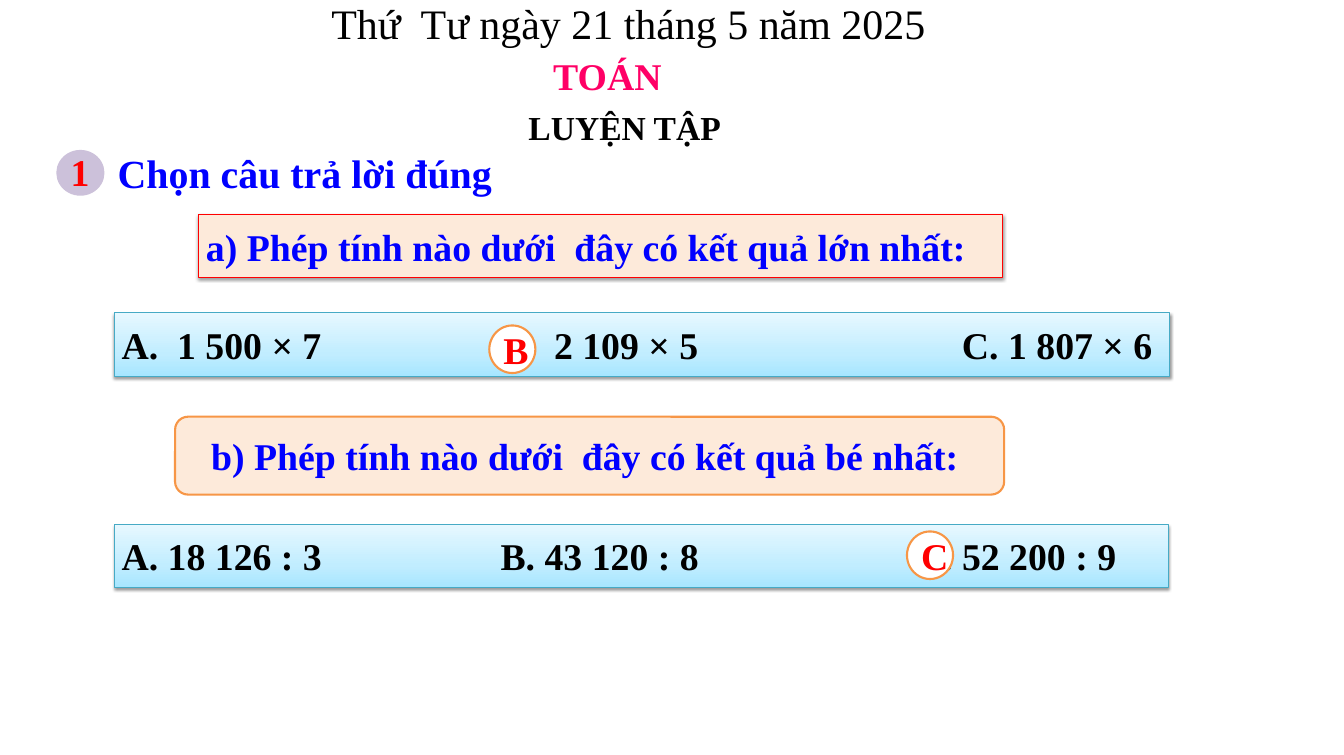
"""Build the maths practice slide with two multiple-choice questions."""
from copy import deepcopy

from lxml.etree import SubElement
from pptx import Presentation
from pptx.dml.color import RGBColor
from pptx.enum.shapes import MSO_SHAPE as SHAPE
from pptx.enum.text import MSO_ANCHOR as ANCHOR, MSO_AUTO_SIZE as FIT, PP_ALIGN as ALIGN
from pptx.oxml.ns import qn
from pptx.util import Cm, Pt

COLORS = {
    "black": "000000", "red": "FF0000", "blue": "0000FF", "pink": "FF0066",
    "lilac": "CCC1DA", "peach": "FDEADA", "orange": "F79646", "white": "FFFFFF",
    "teal": "46AAC5",
}
SKY = [(0, "A7E6FF"), (0.35, "C1EDFF"), (1, "E7F8FF")]
FONT = "Times New Roman"

TITLE = ("LUYỆN TẬP ", (12.45, 3.48, 17.35, 1.63), {"size": 32, "align": ALIGN.CENTER})
BADGE = (1.93, 5.08, 1.55, 1.47)
LABELS = [
    ("1", (2.13, 4.88, 1.14, 1.8), False, {"color": "red"}),
    ("Chọn câu trả lời đúng", (3.71, 4.88, 40.08, 1.88), True, {"size": 38, "color": "blue"}),
    ("Thứ  Tư ngày 21 tháng 5 năm 2025", (9.07, -0.2, 24.13, 1.96), True,
     {"size": 40, "bold": False, "align": ALIGN.CENTER}),
    ("TOÁN", (18.36, 1.65, 4.19, 1.8), False, {"color": "pink"}),
]
QUESTIONS = [
    {
        "ask": "a) Phép tính nào dưới  đây có kết quả lớn nhất:",
        "ask_box": (6.68, 7.21, 27.05, 2.13),
        "ask_style": (SHAPE.RECTANGLE, "red", 0.75, True, ALIGN.LEFT),
        "choices": ["A.  1 500 × 7", "B.  2 109 × 5", "C. 1 807 × 6"],
        "choice_box": (3.84, 10.52, 35.51, 2.13),
        "tabs": (12.75, 28.27),
        "answer": "B", "answer_at": (16.46, 10.95),
    },
    {
        "ask": "b) Phép tính nào dưới  đây có kết quả bé nhất: ",
        "ask_box": (5.89, 14.02, 27.89, 2.62),
        "ask_style": (SHAPE.ROUNDED_RECTANGLE, "orange", 2, False, ALIGN.CENTER),
        "choices": ["A. 18 126 : 3", "B. 43 120 : 8", "C. 52 200 : 9"],
        "choice_box": (3.84, 17.63, 35.46, 2.13),
        "tabs": (12.75, 26.72),
        "answer": "C", "answer_at": (30.51, 17.88),
    },
]
RING = (1.55, 1.6)


def rgb(name):
    return RGBColor.from_string(COLORS[name])


def write(s, text, size=36, color="black", bold=True, align=ALIGN.LEFT, tabs=()):
    p = s.text_frame.paragraphs[0]
    p.alignment = align
    if tabs:
        tab_list = SubElement(p._p.get_or_add_pPr(), qn("a:tabLst"))
        for pos in tabs:
            SubElement(tab_list, qn("a:tab"), pos=str(Cm(pos)), algn="l")
    r = p.add_run()
    r.text = text
    for key, value in {"name": FONT, "size": Pt(size), "bold": bold}.items():
        setattr(r.font, key, value)
    r.font.color.rgb = rgb(color)


def add_shape(slide, kind, box, fill, line, width, shadow=False):
    s = slide.shapes.add_shape(kind, *map(Cm, box))
    if fill == "sky":
        fill_sky(s)
    else:
        s.fill.solid()
        s.fill.fore_color.rgb = rgb(fill)
    s.line.color.rgb = rgb(line)
    s.line.width = Pt(width)
    s.shadow.inherit = False
    if shadow:
        effects = s._element.spPr.find(qn("a:effectLst"))
        drop = SubElement(effects, qn("a:outerShdw"), blurRad=str(Pt(3.1)),
                          dist=str(Pt(1.6)), dir="5400000", rotWithShape="0")
        tint = SubElement(drop, qn("a:srgbClr"), val=COLORS["black"])
        SubElement(tint, qn("a:alpha"), val="38000")
    s.text_frame.vertical_anchor = ANCHOR.MIDDLE
    return s


def fill_sky(s):
    s.fill.gradient()
    s.fill.gradient_angle = 90
    stops = s._element.spPr.find(".//" + qn("a:gsLst"))
    stops.append(deepcopy(stops[0]))
    for stop, (position, color) in zip(s.fill.gradient_stops, SKY):
        stop.position = position
        stop.color.rgb = RGBColor.from_string(color)


def add_title(slide, text, box, style):
    s = slide.shapes.title
    for key, value in zip(("left", "top", "width", "height"), box):
        setattr(s, key, Cm(value))
    tf = s.text_frame
    for key, value in {"vertical_anchor": ANCHOR.TOP, "word_wrap": True,
                       "auto_size": FIT.NONE}.items():
        setattr(tf, key, value)
    write(s, text, **style)


def add_label(slide, text, box, wrap, style):
    s = slide.shapes.add_textbox(*map(Cm, box))
    s.text_frame.word_wrap = wrap
    s.text_frame.auto_size = FIT.SHAPE_TO_FIT_TEXT
    write(s, text, **style)


def add_question(slide, q):
    kind, line, width, shadow, align = q["ask_style"]
    s = add_shape(slide, kind, q["ask_box"], "peach", line, width, shadow)
    write(s, q["ask"], color="blue", align=align)
    s = add_shape(slide, SHAPE.RECTANGLE, q["choice_box"], "sky", "teal", 0.75, True)
    write(s, "\t".join(q["choices"]), tabs=q["tabs"])
    s = add_shape(slide, SHAPE.OVAL, q["answer_at"] + RING, "white", "orange", 2)
    write(s, q["answer"], color="red", align=ALIGN.CENTER)


def main():
    prs = Presentation()
    prs.slide_width, prs.slide_height = Cm(45.21), Cm(25.4)
    slide = prs.slides.add_slide(prs.slide_layouts[5])
    add_title(slide, *TITLE)
    add_shape(slide, SHAPE.OVAL, BADGE, "lilac", "lilac", 2)
    for label in LABELS:
        add_label(slide, *label)
    for q in QUESTIONS:
        add_question(slide, q)
    prs.save("out.pptx")


if __name__ == "__main__":
    main()
